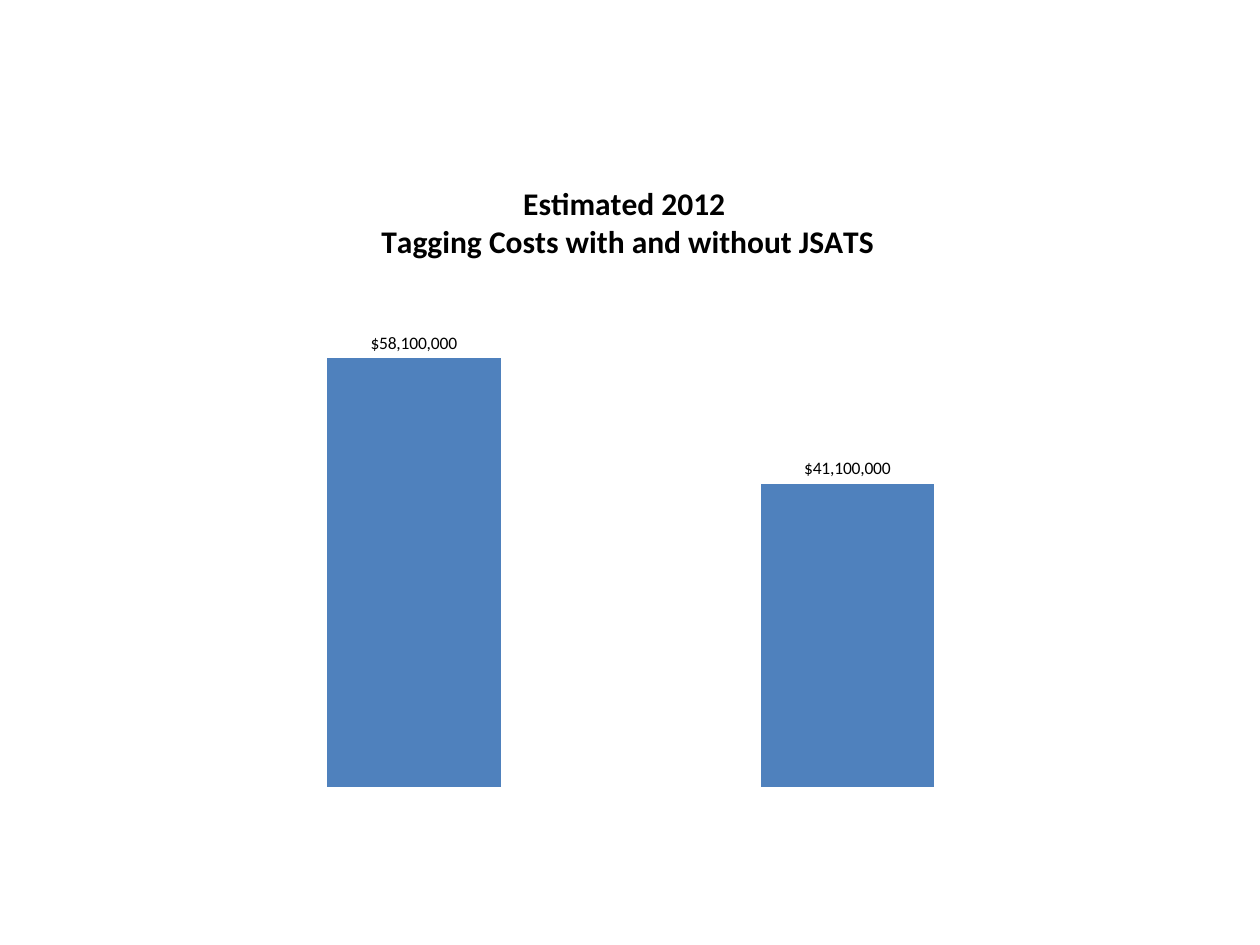
from dataclasses import dataclass
from pptx import Presentation
from pptx.chart.data import CategoryChartData as Data
from pptx.dml.color import RGBColor as RGB
from pptx.enum.chart import XL_CHART_TYPE as Kind, XL_LABEL_POSITION as Spot
from pptx.oxml import parse_xml
from pptx.oxml.ns import nsdecls, qn
from pptx.util import Inches, Pt


@dataclass(frozen=True)
class Theme:
    font: str = "Calibri"
    ink: RGB = RGB(0, 0, 0)
    bar: RGB = RGB(0x4F, 0x81, 0xBD)
    head: Pt = Pt(18)
    body: Pt = Pt(10)
    money: str = '"$"#,##0'


class Deck:
    """Holds the theme and the current slide, and draws each kind of element."""

    def __init__(self, theme):
        self.theme = theme
        self.file = Presentation()
        self.file.slide_width, self.file.slide_height = Inches(10), Inches(7.5)
        self.slide = self.file.slides.add_slide(self.file.slide_layouts[6])

    def style(self, font, size, bold=False):
        font.name, font.size, font.bold = self.theme.font, size, bold
        font.color.rgb = self.theme.ink

    def place(self, node, **parts):
        old = node.find(qn("c:layout"))
        if old is not None:
            node.remove(old)
        modes = "".join(f'<c:{k}Mode val="edge"/>' for k in "xy")
        sizes = "".join(f'<c:{k} val="{v}"/>' for k, v in parts.items())
        target = '<c:layoutTarget val="inner"/>' if "w" in parts else ""
        layout = parse_xml(
            f'<c:layout {nsdecls("c")}><c:manualLayout>{target}{modes}{sizes}'
            "</c:manualLayout></c:layout>"
        )
        text = node.find(qn("c:tx"))
        if text is None:
            node.insert(0, layout)
        else:
            text.addnext(layout)

    def title(self, chart, lines):
        title = chart.chart_title
        frame = title.text_frame
        frame.text = "\n".join(lines)
        for para in frame.paragraphs:
            self.style(para.font, self.theme.head, True)
            for run in para.runs:
                self.style(run.font, self.theme.head, True)
        title.include_in_layout = False
        self.place(title._element, x=0.22, y=0.05)

    def bars(self, box, lines, costs, top):
        data = Data(number_format=self.theme.money)
        data.categories = [str(n) for n in range(1, len(costs) + 1)]
        data.add_series("Series 1", costs)
        frame = self.slide.shapes.add_chart(
            Kind.COLUMN_CLUSTERED, *map(Inches, box), data
        )
        chart = frame.chart
        self.style(chart.font, self.theme.body)
        chart.has_legend = False
        self.title(chart, lines)
        for axis in (chart.category_axis, chart.value_axis):
            axis.visible = False
            axis.has_major_gridlines = False
        chart.value_axis.minimum_scale = 0
        chart.value_axis.maximum_scale = top
        plot = chart.plots[0]
        plot.gap_width, plot.overlap = 150, -25
        plot.vary_by_categories = False
        fill = plot.series[0].format.fill
        fill.solid()
        fill.fore_color.rgb = self.theme.bar
        plot.has_data_labels = True
        labels = plot.data_labels
        labels.show_value = True
        labels.position = Spot.OUTSIDE_END
        labels.number_format = self.theme.money
        labels.number_format_is_linked = False
        self.style(labels.font, self.theme.body)
        area = chart._chartSpace.chart.plotArea
        self.place(area, x=0.02, y=0.19, w=0.96, h=0.79)


def main():
    deck = Deck(Theme())
    deck.bars(
        (1.42, 1.16, 7.17, 5.19),
        ("Estimated 2012 ", "Tagging Costs with and without JSATS"),
        (58100000, 41100000),
        70000000,
    )
    deck.file.save("out.pptx")


if __name__ == "__main__":
    main()
